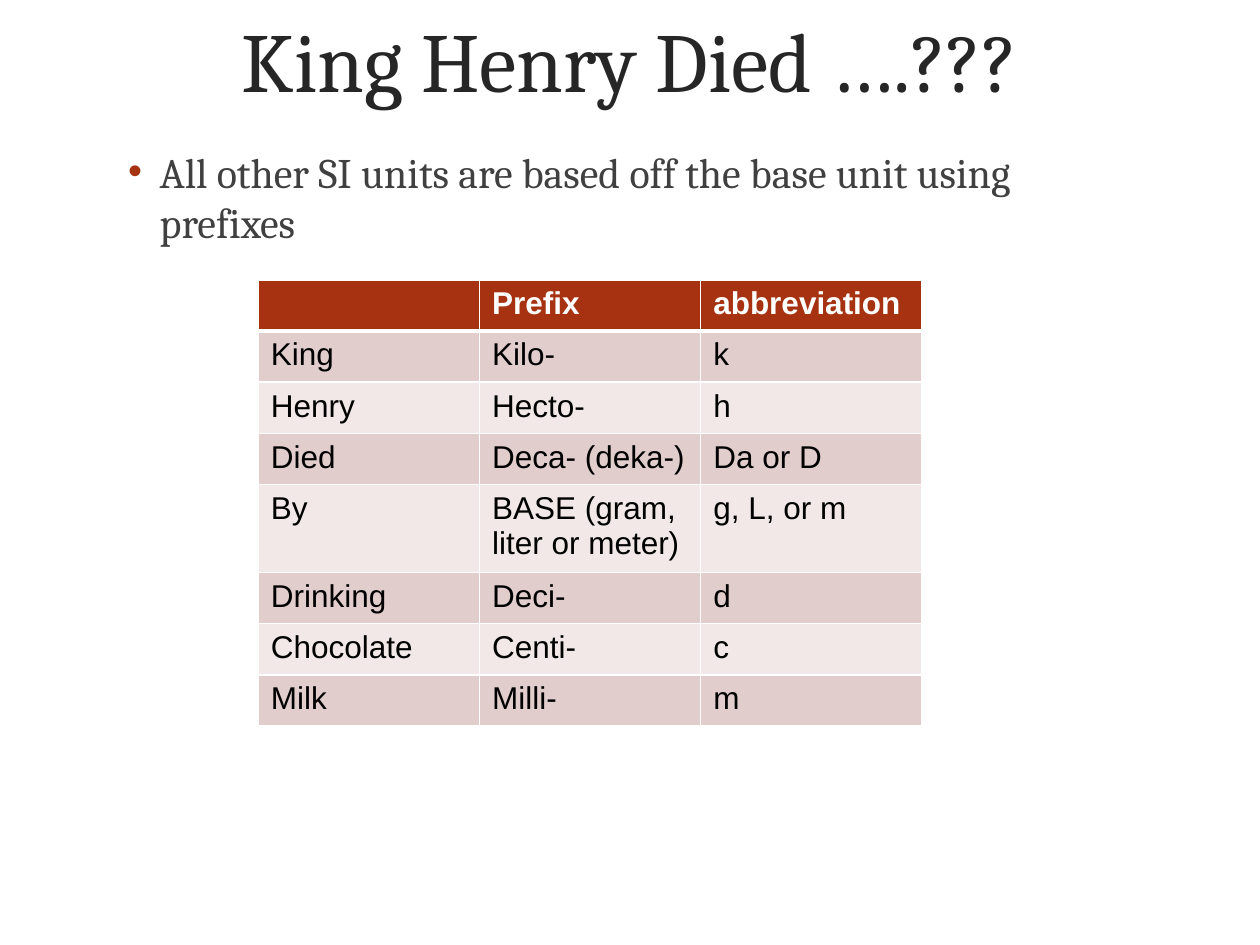
from dataclasses import dataclass

from lxml.etree import SubElement
from pptx import Presentation
from pptx.dml.color import RGBColor
from pptx.enum.text import MSO_ANCHOR, PP_ALIGN
from pptx.oxml.ns import qn
from pptx.util import Pt

RUST = RGBColor(0xA6, 0x32, 0x12)
ROSE = RGBColor(0xE1, 0xCE, 0xCC)
PALE = RGBColor(0xF1, 0xE8, 0xE7)
WHITE = RGBColor(0xFF, 0xFF, 0xFF)
BLACK = RGBColor(0, 0, 0)
TITLE_GREY = RGBColor(0x26, 0x26, 0x26)
BODY_GREY = RGBColor(0x40, 0x40, 0x40)


@dataclass(frozen=True)
class PrefixRow:
    word: str
    prefix: str
    abbreviation: str


ROWS = [
    PrefixRow("", "Prefix", "abbreviation"),
    PrefixRow("King", "Kilo-", "k"),
    PrefixRow("Henry", "Hecto-", "h"),
    PrefixRow("Died", "Deca- (deka-)", "Da or D"),
    PrefixRow("By", "BASE (gram, liter or meter)", "g, L, or m"),
    PrefixRow("Drinking", "Deci-", "d"),
    PrefixRow("Chocolate", "Centi-", "c"),
    PrefixRow("Milk", "Milli-", "m"),
]
COLUMN_WIDTH = 126.4
ROW_HEIGHT = 29.2


def write(frame, text: str, *, size: float, color: RGBColor, font="Arial",
          bold=False, align=PP_ALIGN.LEFT, bullet=None) -> None:
    """Put one formatted paragraph in a text frame."""
    para = frame.paragraphs[0]
    para.alignment = align
    if bullet is not None:
        add_bullet(para, bullet)
    span = para.add_run()
    span.text = text
    span.font.name = font
    span.font.size = Pt(size)
    span.font.bold = bold
    span.font.color.rgb = color


def add_bullet(para, color: RGBColor) -> None:
    properties = para._p.get_or_add_pPr()
    properties.set("marL", str(Pt(18)))
    properties.set("indent", str(-Pt(18)))
    bullet_color = SubElement(properties, qn("a:buClr"))
    SubElement(bullet_color, qn("a:srgbClr"), val=str(color))
    SubElement(properties, qn("a:buSzPct"), val="95000")
    SubElement(properties, qn("a:buFont"), typeface="Arial")
    SubElement(properties, qn("a:buChar"), char="•")


def add_text_box(page, left: float, top: float, width: float, height: float,
                 anchor=MSO_ANCHOR.TOP):
    box = page.shapes.add_textbox(Pt(left), Pt(top), Pt(width), Pt(height))
    box.text_frame.word_wrap = True
    box.text_frame.vertical_anchor = anchor
    return box.text_frame


def add_borders(cell, top: float, bottom: float) -> None:
    properties = cell._tc.get_or_add_tcPr()
    for side, width in (("L", 1), ("R", 1), ("T", top), ("B", bottom)):
        line = SubElement(properties, qn(f"a:ln{side}"), w=str(Pt(width)))
        fill = SubElement(line, qn("a:solidFill"))
        SubElement(fill, qn("a:srgbClr"), val=str(WHITE))


def add_prefix_table(page, left: float, top: float) -> None:
    table = page.shapes.add_table(
        len(ROWS), 3, Pt(left), Pt(top),
        Pt(3 * COLUMN_WIDTH), Pt(len(ROWS) * ROW_HEIGHT)).table
    for column in table.columns:
        column.width = Pt(COLUMN_WIDTH)
    for index, entry in enumerate(ROWS):
        table.rows[index].height = Pt(ROW_HEIGHT)
        header = index == 0
        fill = RUST if header else (ROSE if index % 2 else PALE)
        texts = (entry.word, entry.prefix, entry.abbreviation)
        for cell, text in zip(table.rows[index].cells, texts):
            add_borders(cell, top=3 if index == 1 else 1,
                        bottom=3 if header else 1)
            cell.fill.solid()
            cell.fill.fore_color.rgb = fill
            if text:
                write(cell.text_frame, text, size=18, bold=header,
                      color=WHITE if header else BLACK)


def main() -> None:
    deck = Presentation()
    deck.slide_width, deck.slide_height = Pt(720), Pt(540)
    page = deck.slides.add_slide(deck.slide_layouts[6])

    # Title
    title = add_text_box(page, 43.2, -23, 632.9, 113.8, MSO_ANCHOR.MIDDLE)
    write(title, "King Henry Died ….???", size=48, font="Cambria",
          color=TITLE_GREY, align=PP_ALIGN.CENTER)

    # Bullet text
    body = add_text_box(page, 66.2, 79.9, 588.2, 395.3)
    write(body, "All other SI units are based off the base unit using prefixes",
          size=24, font="Cambria", color=BODY_GREY, bullet=RUST)

    # Prefix table
    add_prefix_table(page, 147.6, 160)

    deck.save("out.pptx")


if __name__ == "__main__":
    main()
